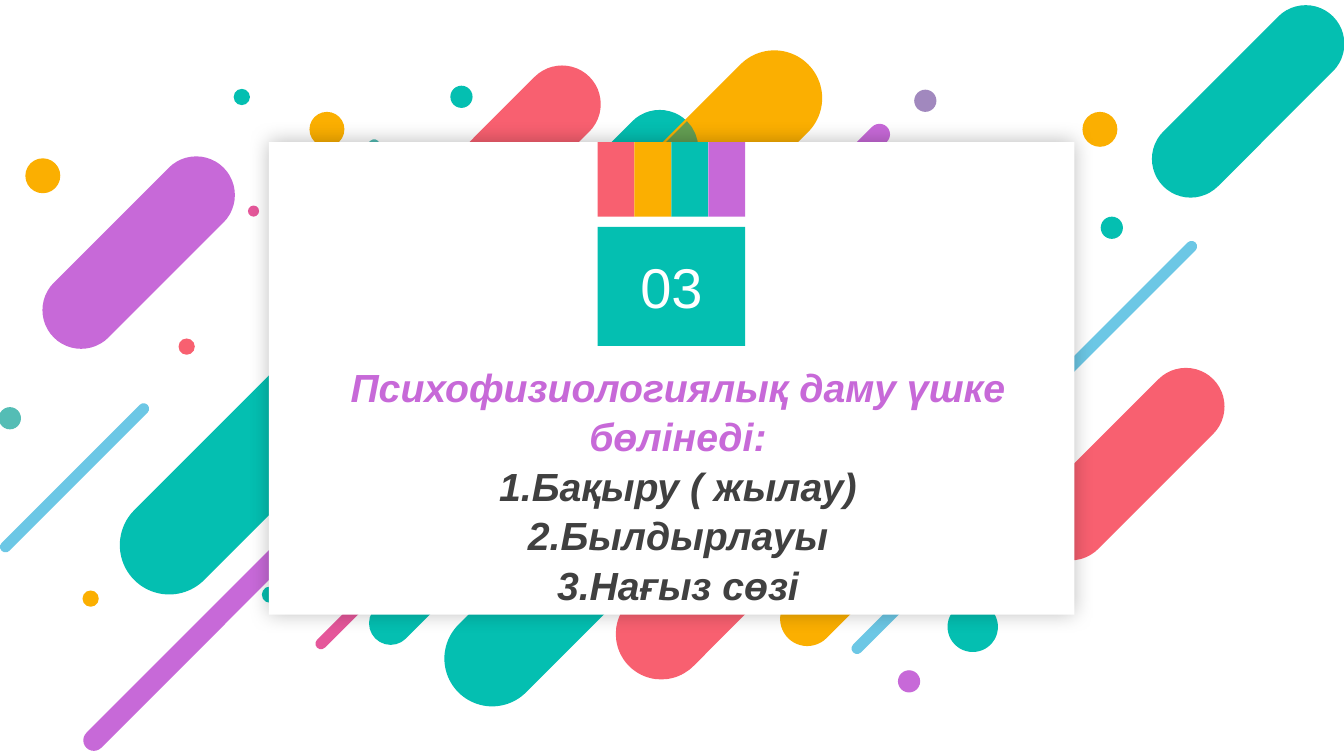
from math import cos, pi, sin, sqrt

from lxml.etree import SubElement
from pptx import Presentation
from pptx.dml.color import RGBColor
from pptx.enum.shapes import MSO_SHAPE as Preset
from pptx.enum.text import MSO_ANCHOR as Anchor, PP_ALIGN as Align
from pptx.oxml.ns import qn
from pptx.util import Cm, Pt


class Theme:
    font = "Arial"
    number_size = 40
    body_size = 28
    line_spacing = 1.05
    teal = "04BFB1"
    coral = "F86070"
    amber = "FBAF01"
    purple = "C769D8"
    lilac = "A188BE"
    pink = "E5579A"
    sky = "6CC7E5"
    sea = "54BDB5"
    olive = "649F53"
    white = "FFFFFF"
    dark = "404040"
    black = "000000"


# Diagonal capsules: left, top, side of the bounding square, thickness (cm)
TEAL_TIP = (12.75, 2.77, 4.85, 1.95)
CAPSULES = [
    (Theme.pink, (7.95, 12.42, 3.94, 0.28)),
    (Theme.teal, TEAL_TIP),
    (Theme.teal, (29.03, 0.13, 4.85, 1.95)),
    (Theme.teal, (3.02, 8.81, 6.17, 2.49)),
    (Theme.coral, (10.29, 1.65, 4.85, 1.95)),
    (Theme.purple, (1.07, 3.94, 4.85, 1.95)),
    (Theme.coral, (26.01, 9.27, 4.85, 1.95)),
    (Theme.amber, (19.66, 12.9, 3.38, 1.37)),
    (Theme.teal, (11.2, 10.21, 7.59, 2.41)),
    (Theme.coral, (15.52, 10.03, 7.09, 2.29)),
    (Theme.amber, (13.13, 1.27, 7.59, 2.41)),
    (Theme.teal, (9.3, 10.03, 6.22, 1.09)),
    (Theme.purple, (15.11, 3.12, 7.32, 0.53)),
    (Theme.purple, (2.1, 10.59, 8.33, 0.53)),
    (Theme.sea, (7.16, 3.51, 2.41, 0.28)),
    (Theme.sky, (21.46, 12.7, 3.78, 0.28)),
    (Theme.sky, (26.39, 6.07, 3.78, 0.28)),
    (Theme.sky, (0, 10.16, 3.76, 0.28)),
]

# Dots: left, top, diameter (cm)
DOTS = [
    (Theme.lilac, 23.04, 2.26, 0.56),
    (Theme.teal, 23.88, 15.16, 1.27),
    (Theme.teal, 11.35, 2.16, 0.56),
    (Theme.sea, -0.03, 10.26, 0.56),
    (Theme.teal, 27.74, 5.46, 0.56),
    (Theme.purple, 22.63, 16.89, 0.56),
    (Theme.pink, 6.25, 5.18, 0.28),
    (Theme.amber, 7.8, 2.82, 0.88),
    (Theme.amber, 0.64, 3.99, 0.88),
    (Theme.amber, 27.28, 2.82, 0.88),
    (Theme.teal, 5.89, 2.24, 0.41),
    (Theme.coral, 4.5, 8.53, 0.41),
    (Theme.teal, 6.6, 14.78, 0.41),
    (Theme.amber, 2.08, 14.88, 0.41),
]

STRIPES = [Theme.coral, Theme.amber, Theme.teal, Theme.purple]
STRIPE_WIDTH = 0.93
CARD_TOP = 3.58
BADGE_LEFT = 15.06
LINES = [
    ("Психофизиологиялық даму үшке бөлінеді:", Theme.purple),
    ("1.Бақыру ( жылау)", Theme.dark),
    ("2.Былдырлауы", Theme.dark),
    ("3.Нағыз сөзі", Theme.dark),
]


class SlideBuilder:
    def __init__(self, slide, theme):
        self.slide = slide
        self.theme = theme

    def paint(self, shape, color):
        shape.shadow.inherit = False
        shape.fill.solid()
        shape.fill.fore_color.rgb = RGBColor.from_string(color)
        shape.line.fill.background()
        return shape

    def preset(self, kind, color, left, top, width, height, parent=None):
        shapes = (parent or self.slide).shapes
        shape = shapes.add_shape(kind, Cm(left), Cm(top), Cm(width), Cm(height))
        return self.paint(shape, color)

    def capsule(self, color, box):
        """Draw a capsule rising at 45 degrees that fills its bounding square."""
        left, top, side, thickness = box
        length = (side - thickness) * sqrt(2) + thickness
        shape = self.preset(Preset.ROUNDED_RECTANGLE, color,
                            left + (side - length) / 2, top + (side - thickness) / 2,
                            length, thickness)
        shape.adjustments[0] = 0.5
        shape.rotation = -45

    def half_capsule(self, color, box):
        """Draw the lower right half of a capsule, split along its axis."""
        left, top, side, thickness = box
        radius = thickness / 2
        low_end = (left + radius, top + side - radius)
        high_end = (left + side - radius, top + radius)
        steps = 8
        points = []
        for (x, y), start in ((high_end, -pi / 4), (low_end, pi / 4)):
            for step in range(steps + 1):
                angle = start + pi / 2 * step / steps
                points.append((Cm(x + radius * cos(angle)), Cm(y + radius * sin(angle))))
        builder = self.slide.shapes.build_freeform(*points[0])
        builder.add_line_segments(points[1:], close=True)
        self.paint(builder.convert_to_shape(), color)

    def card(self, left, top, width, height):
        card = self.preset(Preset.RECTANGLE, self.theme.white, left, top, width, height)
        effects = card._element.spPr.find(qn("a:effectLst"))
        shadow = SubElement(effects, qn("a:outerShdw"), blurRad=str(Pt(15)),
                            dist="0", algn="ctr", rotWithShape="0")
        color = SubElement(shadow, qn("a:srgbClr"), val=self.theme.black)
        SubElement(color, qn("a:alpha"), val="25000")

    def stripes(self, colors, left, top, width, height):
        group = self.slide.shapes.add_group_shape()
        for index, color in enumerate(colors):
            self.preset(Preset.RECTANGLE, color, left + index * width, top,
                        width, height, group)

    def style(self, paragraph, size, color):
        paragraph.alignment = Align.CENTER
        paragraph.font.name = self.theme.font
        paragraph.font.size = Pt(size)
        paragraph.font.color.rgb = RGBColor.from_string(color)

    def badge(self, text, color, left, top, width, height):
        shape = self.preset(Preset.RECTANGLE, color, left, top, width, height)
        shape.text_frame.vertical_anchor = Anchor.MIDDLE
        paragraph = shape.text_frame.paragraphs[0]
        paragraph.text = text
        self.style(paragraph, self.theme.number_size, self.theme.white)

    def text(self, lines, left, top, width, height):
        frame = self.slide.shapes.add_textbox(
            Cm(left), Cm(top), Cm(width), Cm(height)).text_frame
        frame.word_wrap = True
        frame.text = "\n".join(line for line, _ in lines)
        for paragraph, (_, color) in zip(frame.paragraphs, lines):
            self.style(paragraph, self.theme.body_size, color)
            paragraph.font.bold = paragraph.font.italic = True
            paragraph.line_spacing = self.theme.line_spacing


def main():
    presentation = Presentation()
    presentation.slide_width, presentation.slide_height = Cm(33.87), Cm(19.05)
    slide = presentation.slides.add_slide(presentation.slide_layouts[6])
    builder = SlideBuilder(slide, Theme)
    for color, box in CAPSULES:
        builder.capsule(color, box)
    builder.half_capsule(Theme.olive, TEAL_TIP)
    for color, left, top, diameter in DOTS:
        builder.preset(Preset.OVAL, color, left, top, diameter, diameter)
    builder.card(6.78, CARD_TOP, 20.3, 11.91)
    builder.stripes(STRIPES, BADGE_LEFT, CARD_TOP, STRIPE_WIDTH, 1.88)
    builder.badge("03", Theme.teal, BADGE_LEFT, 5.72, len(STRIPES) * STRIPE_WIDTH, 3)
    builder.text(LINES, 7.8, 8.97, 18.57, 6.25)
    presentation.save("out.pptx")


if __name__ == "__main__":
    main()
